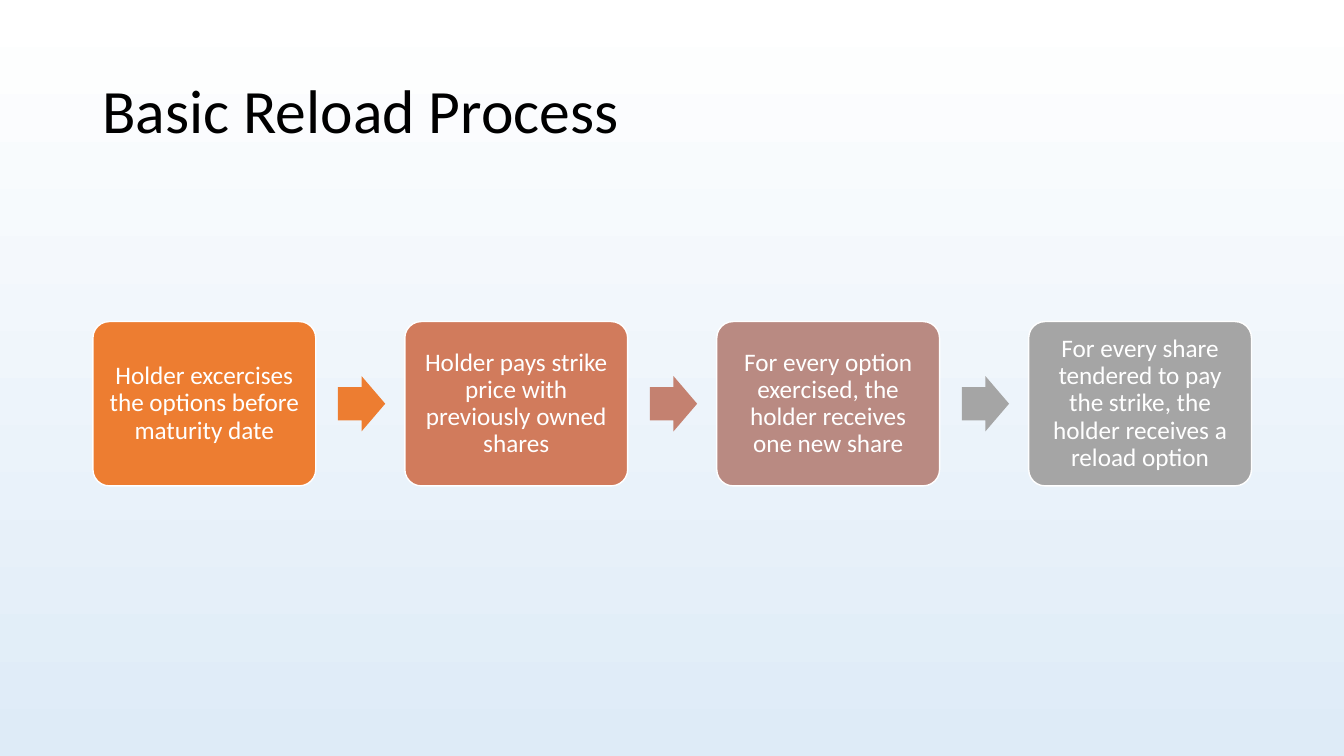
from pptx import Presentation
from pptx.dml.color import RGBColor
from pptx.enum import shapes, text
from pptx.util import Pt

WHITE = RGBColor(0xFF, 0xFF, 0xFF)
BLACK = RGBColor(0x00, 0x00, 0x00)
PALE_BLUE = RGBColor(0xDE, 0xEB, 0xF7)
ORANGE = RGBColor(0xED, 0x7D, 0x31)
TERRACOTTA = RGBColor(0xD1, 0x7B, 0x5C)
CLAY = RGBColor(0xC4, 0x81, 0x70)
ROSE = RGBColor(0xB9, 0x8A, 0x82)
GRAY = RGBColor(0xA5, 0xA5, 0xA5)

TITLE = "Basic Reload Process"
STEPS = [
    ("Holder excercises the options before maturity date", ORANGE),
    ("Holder pays strike price with previously owned shares", TERRACOTTA),
    ("For every option exercised, the holder receives one new share", ROSE),
    ("For every share tendered to pay the strike, the holder receives a reload option", GRAY),
]
ARROW_COLORS = [ORANGE, CLAY, GRAY]

FONT = "Calibri"
LEFT, MIDDLE = 66.4, 288.4
BOX_WIDTH, BOX_HEIGHT = 159.2, 117.4
PITCH = 222.8
ARROW_OFFSET, ARROW_WIDTH, ARROW_HEIGHT = 175, 33.8, 39.5


def write(shape, content, size, color, alignment):
    frame = shape.text_frame
    frame.text = content
    frame.word_wrap = True
    frame.auto_size = text.MSO_AUTO_SIZE.NONE
    frame.vertical_anchor = text.MSO_ANCHOR.MIDDLE
    paragraph = frame.paragraphs[0]
    paragraph.alignment = alignment
    paragraph.line_spacing = 0.9
    font = paragraph.runs[0].font
    font.name, font.size, font.color.rgb = FONT, Pt(size), color


def add_filled(slide, kind, left, width, height, color, adjustments):
    """Add a preset shape centred on the row of steps."""
    shape = slide.shapes.add_shape(
        kind, Pt(left), Pt(MIDDLE - height / 2), Pt(width), Pt(height))
    for index, value in enumerate(adjustments):
        shape.adjustments[index] = value
    shape.shadow.inherit = False
    shape.fill.solid()
    shape.fill.fore_color.rgb = color
    shape.line.fill.background()
    return shape


def add_step(slide, left, content, color):
    box = add_filled(slide, shapes.MSO_SHAPE.ROUNDED_RECTANGLE,
                     left, BOX_WIDTH, BOX_HEIGHT, color, [0.1])
    box.line.color.rgb = WHITE
    box.line.width = Pt(1)
    write(box, content, 18, WHITE, text.PP_ALIGN.CENTER)
    frame = box.text_frame
    frame.margin_left = frame.margin_right = Pt(5)
    frame.margin_top = frame.margin_bottom = Pt(5)


def main():
    presentation = Presentation()
    presentation.slide_width, presentation.slide_height = Pt(960), Pt(540)
    slide = presentation.slides.add_slide(presentation.slide_layouts[5])

    background = slide.background.fill
    background.gradient()
    background.gradient_angle = 270
    for stop, color in zip(background.gradient_stops, (WHITE, PALE_BLUE)):
        stop.color.rgb = color

    title = slide.shapes.title
    title.left, title.top, title.width, title.height = Pt(66), Pt(28.8), Pt(828), Pt(104.4)
    write(title, TITLE, 44, BLACK, text.PP_ALIGN.LEFT)

    for index, (content, color) in enumerate(STEPS):
        add_step(slide, LEFT + index * PITCH, content, color)
    for index, color in enumerate(ARROW_COLORS):
        add_filled(slide, shapes.MSO_SHAPE.RIGHT_ARROW,
                   LEFT + index * PITCH + ARROW_OFFSET,
                   ARROW_WIDTH, ARROW_HEIGHT, color, [0.6, 0.5])

    presentation.save("out.pptx")


if __name__ == "__main__":
    main()
